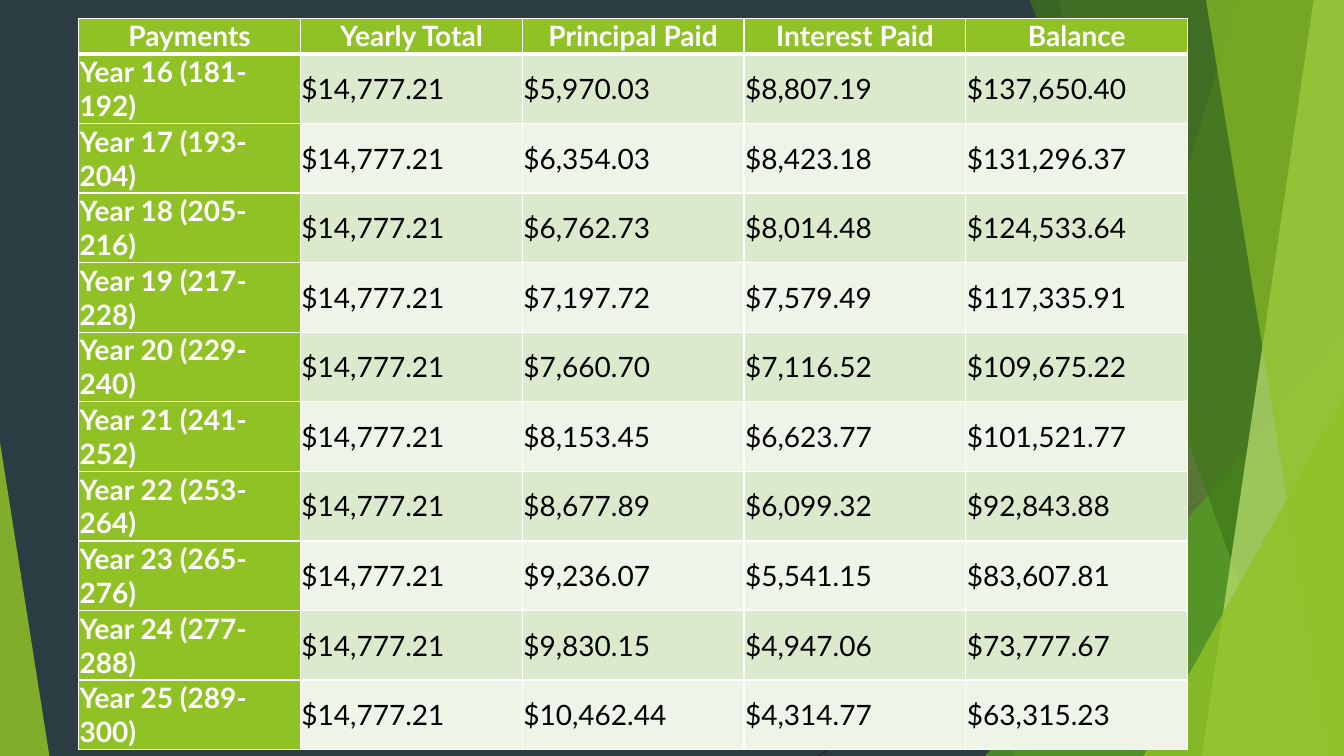
from dataclasses import dataclass

from lxml import etree
from pptx import Presentation
from pptx.dml.color import RGBColor
from pptx.enum.shapes import MSO_CONNECTOR, MSO_SHAPE
from pptx.enum.text import MSO_ANCHOR, PP_ALIGN
from pptx.oxml.ns import qn
from pptx.util import Inches, Pt

STRAIGHT = MSO_CONNECTOR.STRAIGHT
TRIANGLE = MSO_SHAPE.ISOSCELES_TRIANGLE
MIDDLE = MSO_ANCHOR.MIDDLE
LEFT, CENTER = PP_ALIGN.LEFT, PP_ALIGN.CENTER

COLORS = {
    "background": "2C3C43",
    "line": "262626",
    "lime": "90C226",
    "green": "54A021",
    "forest": "3F7819",
    "pale": "C0E474",
    "odd_row": "DBE9CD",
    "even_row": "EEF4E8",
    "white": "FFFFFF",
    "black": "000000",
}
FONT = "Lato"
SLIDE_WIDTH, SLIDE_HEIGHT = 13.33, 7.5
FACET_TOP = -0.01
COLUMN_WIDTH, HEADER_HEIGHT, ROW_HEIGHT = 2.2, 0.33, 0.65
CELL_MARGIN = 0.01
FIRST_YEAR = 16
YEARLY_TOTAL = "$14,777.21"
HEADERS = ["Payments", "Yearly Total", "Principal Paid", "Interest Paid", "Balance"]


@dataclass
class Line:
    start: tuple[float, float]
    end: tuple[float, float]


@dataclass
class Facet:
    top_left: float
    bottom_left: float
    color: str
    opacity: int


@dataclass
class Triangle:
    left: float
    top: float
    width: float
    apex: float
    color: str
    opacity: int


@dataclass
class YearPayment:
    principal: str
    interest: str
    balance: str


LINES = [Line((10.25, 0), (11.58, 7.5)), Line((13.33, 4.03), (8.12, 7.5))]
DECORATIONS = [
    Facet(12.28, 10.04, "lime", 30),
    Facet(10.5, 11.83, "lime", 20),
    Triangle(9.77, 3.33, 3.56, 1, "green", 72),
    Facet(10.21, 12.91, "forest", 70),
    Facet(13.03, 11.92, "pale", 70),
    Facet(11.96, 13.18, "lime", 65),
    Triangle(11.34, 3.93, 1.99, 1, "lime", 80),
    Triangle(0, 4.39, 0.49, 0, "lime", 85),
]
PAYMENTS = [
    YearPayment("$5,970.03", "$8,807.19", "$137,650.40"),
    YearPayment("$6,354.03", "$8,423.18", "$131,296.37"),
    YearPayment("$6,762.73", "$8,014.48", "$124,533.64"),
    YearPayment("$7,197.72", "$7,579.49", "$117,335.91"),
    YearPayment("$7,660.70", "$7,116.52", "$109,675.22"),
    YearPayment("$8,153.45", "$6,623.77", "$101,521.77"),
    YearPayment("$8,677.89", "$6,099.32", "$92,843.88"),
    YearPayment("$9,236.07", "$5,541.15", "$83,607.81"),
    YearPayment("$9,830.15", "$4,947.06", "$73,777.67"),
    YearPayment("$10,462.44", "$4,314.77", "$63,315.23"),
]


def rgb(name: str) -> RGBColor:
    return RGBColor.from_string(COLORS[name])


def fill_solid(fill, color: str) -> None:
    fill.solid()
    fill.fore_color.rgb = rgb(color)


def draw_line(slide, line: Line) -> None:
    points = [Inches(value) for value in (*line.start, *line.end)]
    connector = slide.shapes.add_connector(STRAIGHT, *points)
    connector.line.color.rgb = rgb("line")
    connector.line.width = Pt(0.75)
    etree.SubElement(connector.element.spPr, qn("a:effectLst"))


def add_facet(slide, facet: Facet):
    corners = [
        (Inches(x), Inches(y))
        for x, y in (
            (facet.top_left, FACET_TOP),
            (SLIDE_WIDTH, FACET_TOP),
            (SLIDE_WIDTH, SLIDE_HEIGHT),
            (facet.bottom_left, SLIDE_HEIGHT),
        )
    ]
    builder = slide.shapes.build_freeform(*corners[0])
    builder.add_line_segments(corners[1:], close=True)
    return builder.convert_to_shape()


def add_triangle(slide, triangle: Triangle):
    shape = slide.shapes.add_shape(
        TRIANGLE,
        Inches(triangle.left),
        Inches(triangle.top),
        Inches(triangle.width),
        Inches(SLIDE_HEIGHT - triangle.top),
    )
    shape.adjustments[0] = triangle.apex
    return shape


def draw_decoration(slide, item: Facet | Triangle) -> None:
    shape = add_facet(slide, item) if isinstance(item, Facet) else add_triangle(slide, item)
    shape.shadow.inherit = False
    shape.line.fill.background()
    fill_solid(shape.fill, item.color)
    color = shape.element.spPr.find(qn("a:solidFill"))[0]
    etree.SubElement(color, qn("a:alpha"), val=str(item.opacity * 1000))


def set_borders(cell, top: float, bottom: float) -> None:
    properties = cell._tc.get_or_add_tcPr()
    for side, width in (("L", 1), ("R", 1), ("T", top), ("B", bottom)):
        border = etree.SubElement(properties, qn(f"a:ln{side}"), w=str(Pt(width)))
        solid = etree.SubElement(border, qn("a:solidFill"))
        etree.SubElement(solid, qn("a:srgbClr"), val=COLORS["white"])


def write_text(cell, text: str, *, color: str, bold: bool, align: PP_ALIGN) -> None:
    paragraph = cell.text_frame.paragraphs[0]
    paragraph.alignment = align
    run = paragraph.add_run()
    run.text = text
    run.font.name = FONT
    run.font.size = Pt(20)
    run.font.bold = bold
    run.font.color.rgb = rgb(color)


def table_rows() -> list[list[str]]:
    rows = [HEADERS]
    for year, payment in enumerate(PAYMENTS, FIRST_YEAR):
        label = f"Year {year} ({year * 12 - 11}-{year * 12})"
        rows.append([label, YEARLY_TOTAL, payment.principal, payment.interest, payment.balance])
    return rows


def draw_table(slide) -> None:
    rows = table_rows()
    width = COLUMN_WIDTH * len(HEADERS)
    height = HEADER_HEIGHT + ROW_HEIGHT * len(PAYMENTS)
    table = slide.shapes.add_table(
        len(rows), len(HEADERS), Inches(0.78), Inches(0.18), Inches(width), Inches(height)
    ).table
    table.first_col = True
    for column in table.columns:
        column.width = Inches(COLUMN_WIDTH)
    for row_index, texts in enumerate(rows):
        is_header = row_index == 0
        table.rows[row_index].height = Inches(HEADER_HEIGHT if is_header else ROW_HEIGHT)
        band = "odd_row" if row_index % 2 else "even_row"
        for column_index, text in enumerate(texts):
            accented = is_header or column_index == 0
            cell = table.cell(row_index, column_index)
            cell.vertical_anchor = MIDDLE
            cell.margin_left = cell.margin_right = Inches(CELL_MARGIN)
            cell.margin_top = cell.margin_bottom = Inches(CELL_MARGIN)
            set_borders(cell, top=3 if row_index == 1 else 1, bottom=3 if is_header else 1)
            fill_solid(cell.fill, "lime" if accented else band)
            write_text(cell, text, color="white" if accented else "black",
                       bold=accented, align=CENTER if is_header else LEFT)


def main() -> None:
    presentation = Presentation()
    presentation.slide_width = Inches(SLIDE_WIDTH)
    presentation.slide_height = Inches(SLIDE_HEIGHT)
    slide = presentation.slides.add_slide(presentation.slide_layouts[6])
    fill_solid(slide.background.fill, "background")
    for line in LINES:
        draw_line(slide, line)
    for item in DECORATIONS:
        draw_decoration(slide, item)
    draw_table(slide)
    presentation.save("out.pptx")


if __name__ == "__main__":
    main()
